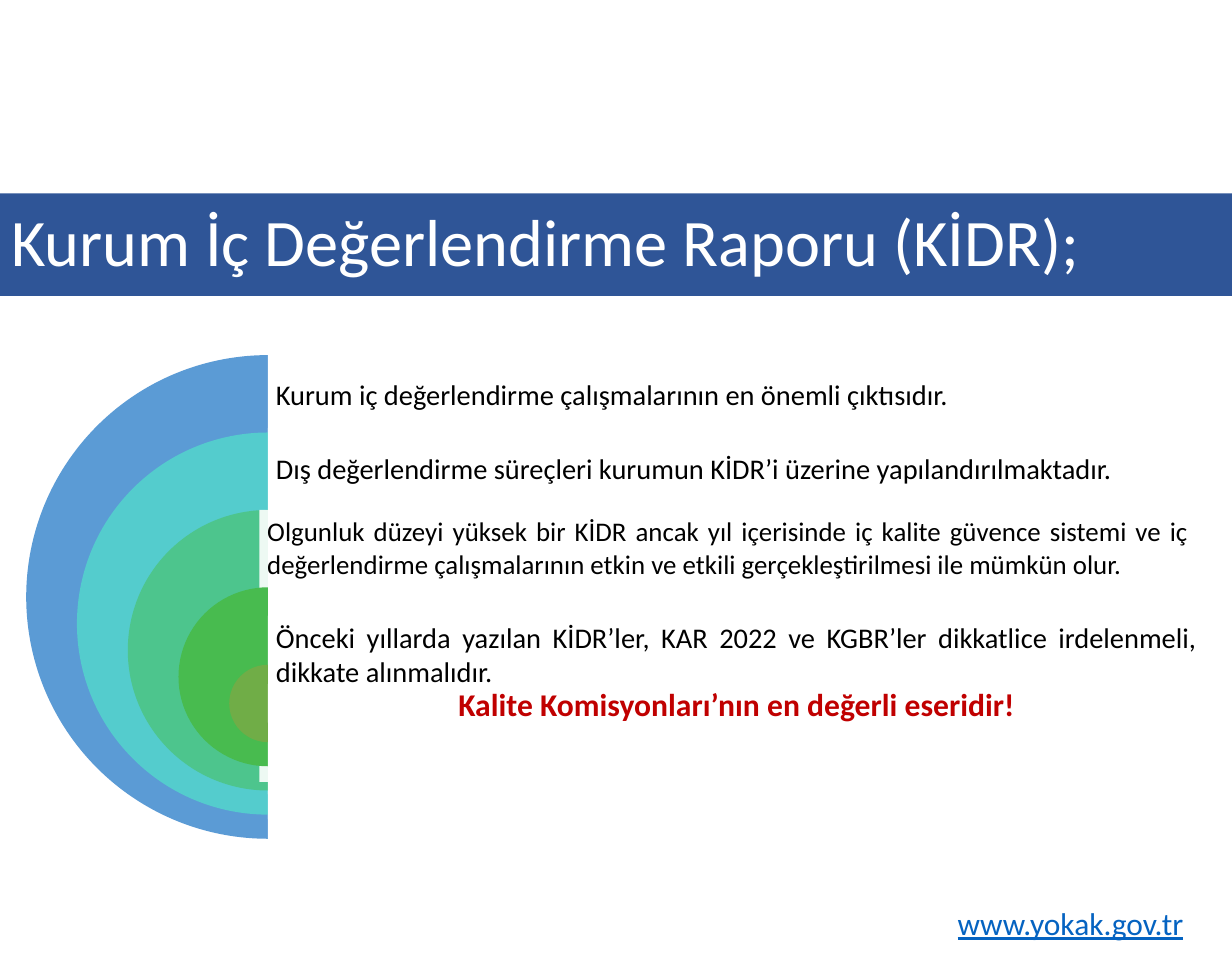
from dataclasses import dataclass

from lxml import etree
from pptx import Presentation
from pptx.dml.color import RGBColor
from pptx.enum.shapes import MSO_SHAPE
from pptx.enum.text import MSO_ANCHOR, PP_ALIGN
from pptx.oxml.ns import qn
from pptx.util import Inches, Pt

RECT, PIE = MSO_SHAPE.RECTANGLE, MSO_SHAPE.PIE
LEFT, MID, JUST = PP_ALIGN.LEFT, PP_ALIGN.CENTER, PP_ALIGN.JUSTIFY
MIDDLE, TOP = MSO_ANCHOR.MIDDLE, MSO_ANCHOR.TOP
FONT = "Calibri"
WIDE, HIGH = Inches(10.83), Inches(8.47)

COLORS = {
    "band": "2F5597", "white": "FFFFFF", "black": "000000",
    "red": "C00000", "link": "0563C1",
    "blue": "5B9BD5", "aqua": "54CCCD", "mint": "4DC58D",
    "green": "48BB4F", "olive": "70AD47",
}

# Ring geometry in percent of the slide: widths for size, heights for top
AXIS = 21.75
RING_SIZE, SIZE_STEP = 39.24, 8.24
RING_TOP, TOP_STEP = 36.84, 8.03
PANEL_WIDE = 76.08
HALF_TURN = (54, 162)  # quarter and three-quarter turn: the left half


@dataclass
class Box:
    """A place in percent of the slide's width and height."""
    left: float
    top: float
    wide: float
    high: float

    def spot(self) -> tuple[int, int, int, int]:
        return (int(WIDE * self.left / 100), int(HIGH * self.top / 100),
                int(WIDE * self.wide / 100), int(HIGH * self.high / 100))


@dataclass
class Style:
    size: float
    color: str = "black"
    align: PP_ALIGN = JUST
    anchor: MSO_ANCHOR = MIDDLE
    inset: float | None = 0.07
    bold: bool = False
    under: bool = False
    line: float | None = None


@dataclass
class Layer:
    color: str
    top: float
    deep: float  # panel height
    high: float  # text height
    text: str
    style: Style
    left: float = AXIS


LAYERS = [
    Layer("blue", 36.84, 50.18, 8.03,
          "Kurum iç değerlendirme çalışmalarının en önemli çıktısıdır.",
          Style(18, align=LEFT)),
    Layer("aqua", 44.39, 40.61, 8.26,
          "Dış değerlendirme süreçleri kurumun KİDR’i üzerine "
          "yapılandırılmaktadır.", Style(18)),
    Layer("mint", 52.89, 28.22, 7.79,
          "Olgunluk düzeyi yüksek bir KİDR ancak yıl içerisinde iç kalite "
          "güvence sistemi ve iç değerlendirme çalışmalarının etkin ve etkili "
          "gerçekleştirilmesi ile mümkün olur.", Style(17), left=21.05),
    Layer("green", 63.87, 18.54, 8.03,
          "Önceki yıllarda yazılan KİDR’ler, KAR 2022 ve KGBR’ler dikkatlice "
          "irdelenmeli, dikkate alınmalıdır.", Style(18)),
    Layer("olive", 70.96, 4.01, 4.01,
          "Kalite Komisyonları’nın en değerli eseridir!",
          Style(20, "red", MID, inset=0.08, bold=True)),
]


def write(shape, text: str, style: Style) -> None:
    frame = shape.text_frame
    frame.word_wrap = True
    frame.vertical_anchor = style.anchor
    if style.inset is not None:
        frame.margin_left = frame.margin_right = Inches(style.inset)
        frame.margin_top = frame.margin_bottom = Inches(style.inset)
    frame.text = text
    para = frame.paragraphs[0]
    para.alignment = style.align
    if style.line:
        para.line_spacing = style.line
    font = para.runs[0].font
    font.name, font.size = FONT, Pt(style.size)
    font.bold, font.underline = style.bold, style.under
    font.color.rgb = RGBColor.from_string(COLORS[style.color])


def draw(slide, kind: MSO_SHAPE, box: Box, color: str, alpha: int = 100):
    shape = slide.shapes.add_shape(kind, *box.spot())
    shape.shadow.inherit = False
    shape.line.fill.background()
    shape.fill.solid()
    shape.fill.fore_color.rgb = RGBColor.from_string(COLORS[color])
    if alpha < 100:
        tint = shape.fill._xPr.find(f".//{qn('a:srgbClr')}")
        etree.SubElement(tint, qn("a:alpha")).set("val", str(alpha * 1000))
    return shape


def label(slide, box: Box, text: str, style: Style) -> None:
    write(slide.shapes.add_textbox(*box.spot()), text, style)


def ring(slide, rank: int, color: str) -> None:
    size = RING_SIZE - rank * SIZE_STEP
    box = Box(AXIS - size / 2, RING_TOP + rank * TOP_STEP,
              size, size * WIDE / HIGH)
    pie = draw(slide, PIE, box, color)
    for spot, turn in enumerate(HALF_TURN):
        pie.adjustments[spot] = turn


def main() -> None:
    deck = Presentation()
    deck.slide_width, deck.slide_height = WIDE, HIGH
    slide = deck.slides.add_slide(deck.slide_layouts[6])

    # Title band
    band = draw(slide, RECT, Box(0, 20.07, 100, 10.63), "band")
    write(band, "Kurum İç Değerlendirme Raporu (KİDR);",
          Style(42, "white", LEFT, inset=None, line=0.9))

    # Nested half rings, each with its panel and text
    for rank, layer in enumerate(LAYERS):
        ring(slide, rank, layer.color)
        draw(slide, RECT, Box(layer.left, layer.top, PANEL_WIDE, layer.deep),
             "white", 90)
        label(slide, Box(layer.left, layer.top, PANEL_WIDE, layer.high),
              layer.text, layer.style)

    # Web address
    label(slide, Box(76.82, 93.15, 21.51, 5.19), "www.yokak.gov.tr",
          Style(19.9, "link", LEFT, TOP, None, under=True))

    deck.save("out.pptx")


if __name__ == "__main__":
    main()
